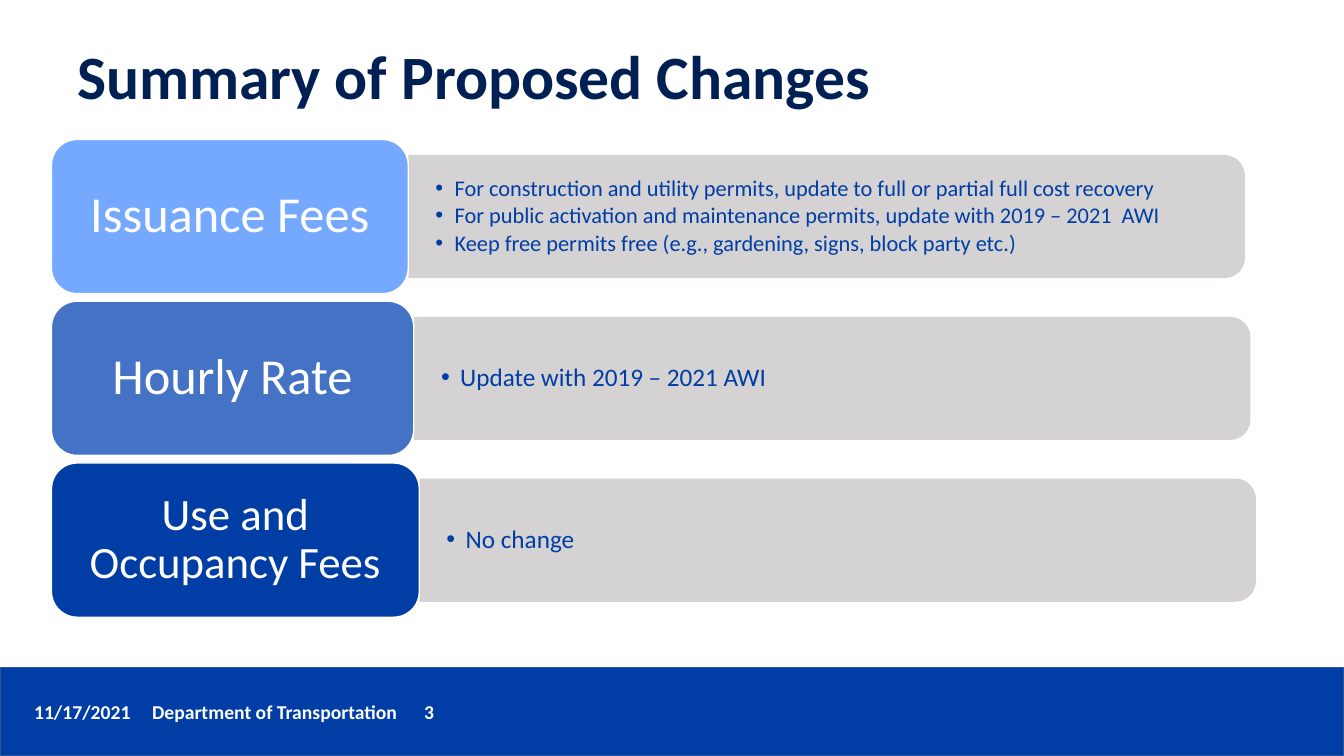
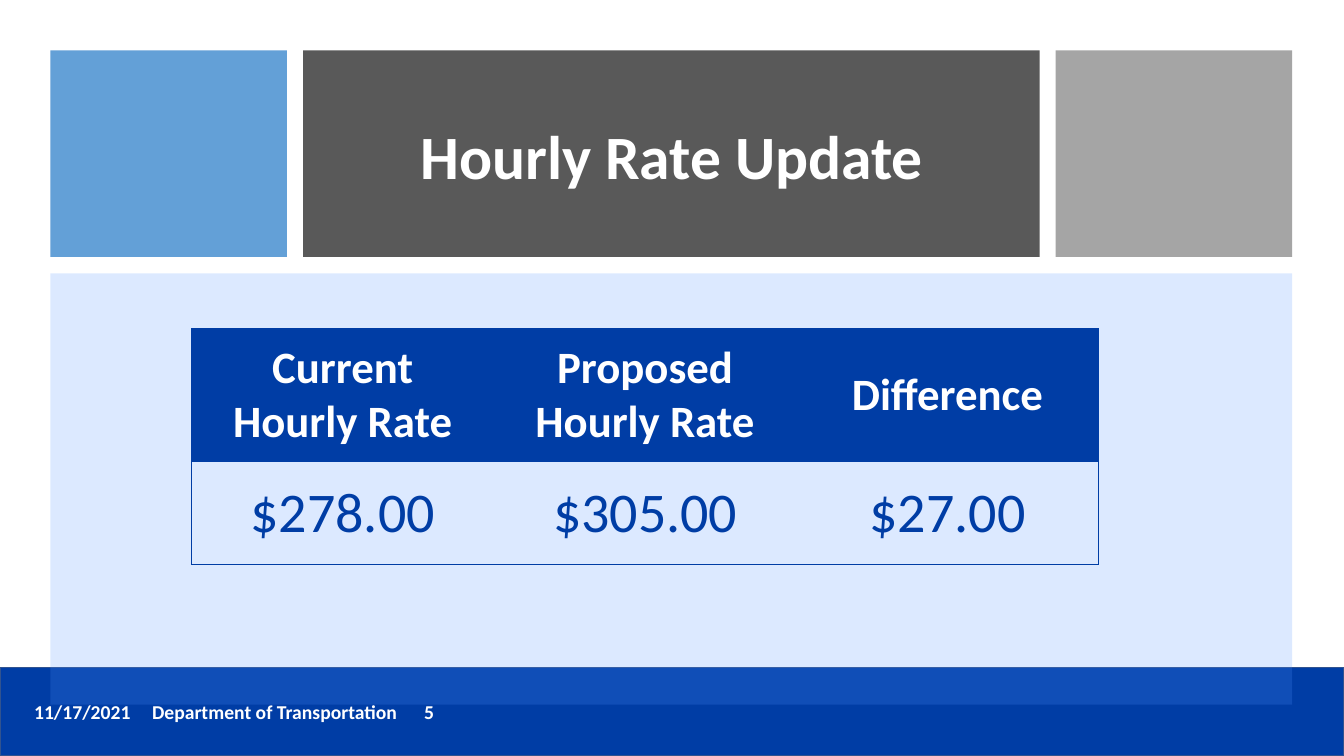
from dataclasses import dataclass

import lxml.etree
import pptx
import pptx.dml.color
import pptx.enum.shapes
import pptx.enum.text
import pptx.oxml.ns
import pptx.presentation
import pptx.shapes.autoshape
import pptx.slide
import pptx.table
import pptx.text.text
import pptx.util

SLIDE_WIDTH = pptx.util.Inches(40 / 3)
SLIDE_HEIGHT = pptx.util.Inches(7.5)
FONT = "Calibri"
COLORS = {
    "white": "FFFFFF",
    "navy": "001F52",
    "blue": "003DA5",
    "band line": "31538F",
    "light blue": "75A8FF",
    "medium blue": "4472C4",
    "pale gray": "D0CECE",
    "sky": "5B9BD5",
    "charcoal": "595959",
    "gray": "A5A5A5",
    "panel": "5392FF",
}
SHAPES = pptx.enum.shapes.MSO_SHAPE
ALIGN = pptx.enum.text.PP_ALIGN
MIDDLE = pptx.enum.text.MSO_ANCHOR.MIDDLE
qn = pptx.oxml.ns.qn


def across(percent: float) -> int:
    return round(SLIDE_WIDTH * percent / 100)


def down(percent: float) -> int:
    return round(SLIDE_HEIGHT * percent / 100)


@dataclass(frozen=True)
class Box:
    """A rectangle in percent of the slide's width and height."""
    left: float
    top: float
    width: float
    height: float

    def place(self) -> tuple[int, int, int, int]:
        return across(self.left), down(self.top), across(self.width), down(self.height)


@dataclass(frozen=True)
class TextStyle:
    size: float
    color: str
    bold: bool = False
    align: ALIGN = ALIGN.LEFT
    line_spacing: float = 1.0


@dataclass(frozen=True)
class Change:
    label: str
    label_size: int
    color: str
    bullets: tuple[str, ...]
    bullet_size: int


@dataclass(frozen=True)
class Block:
    box: Box
    color: str
    opacity: int = 100


FOOTER_BAND = Box(0, 88.27, 100, 11.73)
FOOTER_TEXT = Box(1.8, 91.87, 75.45, 4.53)
FOOTER_TABS = (8.78, 29.03)
FOOTER_STYLE = TextStyle(14, "white", bold=True)

LABEL = Box(3.83, 18.45, 26.55, 20.4)
LABEL_PITCH, LABEL_GROWTH = 21.4, 0.41
BAR_WIDTH, BAR_HEIGHT = 62.25, 16.3
CHANGES = (
    Change("Issuance Fees", 36, "light blue", (
        "For construction and utility permits, update to full or partial full cost recovery",
        "For public activation and maintenance permits, update with 2019 – 2021  AWI",
        "Keep free permits free (e.g., gardening, signs, block party etc.)",
    ), 16),
    Change("Hourly Rate", 36, "medium blue", ("Update with 2019 – 2021 AWI",), 18),
    Change("Use and Occupancy Fees", 32, "blue", ("No change",), 18),
)

MARGIN, BLOCK_TOP, BLOCK_HEIGHT = 3.75, 6.67, 27.33
GAP_ACROSS, GAP_DOWN = 1.2, 2.15
SIDE_WIDTH, CENTER_WIDTH = 17.6, 54.8
CENTER_LEFT = MARGIN + SIDE_WIDTH + GAP_ACROSS
RIGHT_LEFT = CENTER_LEFT + CENTER_WIDTH + GAP_ACROSS
BLOCKS = (
    Block(Box(MARGIN, BLOCK_TOP, SIDE_WIDTH, BLOCK_HEIGHT), "sky", 95),
    Block(Box(CENTER_LEFT, BLOCK_TOP, CENTER_WIDTH, BLOCK_HEIGHT), "charcoal"),
    Block(Box(RIGHT_LEFT, BLOCK_TOP, SIDE_WIDTH, BLOCK_HEIGHT), "gray"),
    Block(Box(MARGIN, BLOCK_TOP + BLOCK_HEIGHT + GAP_DOWN,
              RIGHT_LEFT + SIDE_WIDTH - MARGIN, 57.05), "panel", 20),
)

RATE_ROW_HEIGHTS = (17.6, 13.6)
RATE_TABLE = Box(14.25, 43.47, 67.5, sum(RATE_ROW_HEIGHTS))
RATES = (
    (("Current Hourly Rate",), ("Proposed", "Hourly Rate"), ("Difference",)),
    (("$278.00",), ("$305.00",), ("$27.00",)),
)
RATE_STYLES = (
    TextStyle(32, "white", bold=True, align=ALIGN.CENTER),
    TextStyle(40, "blue", align=ALIGN.CENTER),
)


def rgb(color: str) -> pptx.dml.color.RGBColor:
    return pptx.dml.color.RGBColor.from_string(COLORS[color])


def add_shape(slide: pptx.slide.Slide, kind: SHAPES, box: Box, color: str,
              line: str | None = None, opacity: int = 100) -> pptx.shapes.autoshape.Shape:
    shape = slide.shapes.add_shape(kind, *box.place())
    shape.shadow.inherit = False
    shape.fill.solid()
    shape.fill.fore_color.rgb = rgb(color)
    if opacity < 100:
        fill_color = shape.element.spPr.find(qn("a:solidFill"))[0]
        lxml.etree.SubElement(fill_color, qn("a:alpha"), val=str(opacity * 1000))
    if line:
        shape.line.color.rgb = rgb(line)
        shape.line.width = pptx.util.Pt(1)
    else:
        shape.line.fill.background()
    return shape


def set_margins(target: pptx.text.text.TextFrame | pptx.table._Cell,
                side: float, top: float) -> None:
    target.margin_left = target.margin_right = pptx.util.Inches(side)
    target.margin_top = target.margin_bottom = pptx.util.Inches(top)


def write(frame: pptx.text.text.TextFrame, lines: tuple[str, ...],
          style: TextStyle) -> None:
    frame.word_wrap = True
    for index, line in enumerate(lines):
        paragraph = frame.add_paragraph() if index else frame.paragraphs[0]
        paragraph.alignment = style.align
        paragraph.line_spacing = style.line_spacing
        run = paragraph.add_run()
        run.text = line
        run.font.name = FONT
        run.font.size = pptx.util.Pt(style.size)
        run.font.bold = style.bold
        run.font.color.rgb = rgb(style.color)


def add_text(slide: pptx.slide.Slide, box: Box, lines: tuple[str, ...],
             style: TextStyle) -> pptx.text.text.TextFrame:
    frame = slide.shapes.add_textbox(*box.place()).text_frame
    frame.vertical_anchor = MIDDLE
    write(frame, lines, style)
    return frame


def add_title(slide: pptx.slide.Slide, box: Box, title: str, color: str,
              align: ALIGN = ALIGN.LEFT) -> None:
    add_text(slide, box, (title,), TextStyle(44, color, True, align, 0.9))


def add_bullets(frame: pptx.text.text.TextFrame, size: int) -> None:
    indent = pptx.util.Inches(0.19)
    for paragraph in frame.paragraphs:
        paragraph.space_after = pptx.util.Pt(size * 0.15)
        properties = paragraph._p.get_or_add_pPr()
        properties.set("marL", str(indent))
        properties.set("indent", str(-indent))
        lxml.etree.SubElement(properties, qn("a:buFont"), typeface="Arial")
        lxml.etree.SubElement(properties, qn("a:buChar"), char="•")


def new_slide(presentation: pptx.presentation.Presentation, number: int) -> pptx.slide.Slide:
    """Add a blank slide with the footer band and its tabbed text."""
    slide = presentation.slides.add_slide(presentation.slide_layouts[6])
    add_shape(slide, SHAPES.RECTANGLE, FOOTER_BAND, "blue", line="band line")
    footer = f"11/17/2021\tDepartment of Transportation\t{number}"
    frame = add_text(slide, FOOTER_TEXT, (footer,), FOOTER_STYLE)
    properties = frame.paragraphs[0]._p.get_or_add_pPr()
    tabs = lxml.etree.SubElement(properties, qn("a:tabLst"))
    for stop in FOOTER_TABS:
        lxml.etree.SubElement(tabs, qn("a:tab"), pos=str(across(stop)), algn="l")
    return slide


def add_bar(slide: pptx.slide.Slide, box: Box) -> None:
    """Draw a bar rounded on its right end: an upright shape turned by 90 degrees."""
    bar = add_shape(slide, SHAPES.ROUND_2_SAME_RECTANGLE, box, "pale gray", opacity=90)
    left, top, width, height = box.place()
    bar.left, bar.top = left + (width - height) // 2, top + (height - width) // 2
    bar.width, bar.height = height, width
    bar.rotation = 90


def add_change(slide: pptx.slide.Slide, index: int, change: Change) -> None:
    label_box = Box(LABEL.left, LABEL.top + index * LABEL_PITCH,
                    LABEL.width + index * LABEL_GROWTH, LABEL.height)
    bar_box = Box(label_box.left + label_box.width,
                  label_box.top + (LABEL.height - BAR_HEIGHT) / 2, BAR_WIDTH, BAR_HEIGHT)
    add_bar(slide, bar_box)
    bullets = add_text(slide, bar_box, change.bullets,
                       TextStyle(change.bullet_size, "blue", line_spacing=0.9))
    set_margins(bullets, 0.27, 0.14)
    add_bullets(bullets, change.bullet_size)
    label = add_shape(slide, SHAPES.ROUNDED_RECTANGLE, label_box, change.color, line="white")
    label.text_frame.vertical_anchor = MIDDLE
    set_margins(label.text_frame, 0.22, 0.14)
    write(label.text_frame, (change.label,),
          TextStyle(change.label_size, "white", align=ALIGN.CENTER, line_spacing=0.9))


def set_borders(cell: pptx.table._Cell, sides: dict[str, bool]) -> None:
    """Rule the sides that are true and clear the others."""
    properties = cell._tc.get_or_add_tcPr()
    for position, (side, ruled) in enumerate(sides.items()):
        line = lxml.etree.Element(qn(f"a:ln{side}"), w=str(pptx.util.Pt(0.5)))
        if ruled:
            fill = lxml.etree.SubElement(line, qn("a:solidFill"))
            lxml.etree.SubElement(fill, qn("a:srgbClr"), val=COLORS["blue"])
        else:
            lxml.etree.SubElement(line, qn("a:noFill"))
        properties.insert(position, line)


def add_rate_table(slide: pptx.slide.Slide) -> None:
    column_count = len(RATES[0])
    table = slide.shapes.add_table(len(RATES), column_count, *RATE_TABLE.place()).table
    table.horz_banding = False
    for column in table.columns:
        column.width = across(RATE_TABLE.width / column_count)
    for row, (height, texts) in enumerate(zip(RATE_ROW_HEIGHTS, RATES)):
        table.rows[row].height = down(height)
        for column, lines in enumerate(texts):
            cell = table.cell(row, column)
            cell.vertical_anchor = MIDDLE
            set_margins(cell, 0.17, 0.08)
            if row == 0:
                cell.fill.solid()
                cell.fill.fore_color.rgb = rgb("blue")
            else:
                cell.fill.background()
            set_borders(cell, {"L": column == 0, "R": column == column_count - 1,
                               "T": True, "B": True})
            write(cell.text_frame, lines, RATE_STYLES[row])


def build_summary(presentation: pptx.presentation.Presentation) -> None:
    slide = new_slide(presentation, 3)
    add_title(slide, Box(5, 0.8, 86.25, 19.33), "Summary of Proposed Changes", "navy")
    for index, change in enumerate(CHANGES):
        add_change(slide, index, change)


def build_hourly_rate(presentation: pptx.presentation.Presentation) -> None:
    slide = new_slide(presentation, 5)
    for block in BLOCKS:
        add_shape(slide, SHAPES.RECTANGLE, block.box, block.color, opacity=block.opacity)
    add_title(slide, Box(25, 10.67, 50, 20.8), "Hourly Rate Update", "white", ALIGN.CENTER)
    add_rate_table(slide)


def main() -> None:
    presentation = pptx.Presentation()
    presentation.slide_width = SLIDE_WIDTH
    presentation.slide_height = SLIDE_HEIGHT
    build_summary(presentation)
    build_hourly_rate(presentation)
    presentation.save("out.pptx")


if __name__ == "__main__":
    main()
